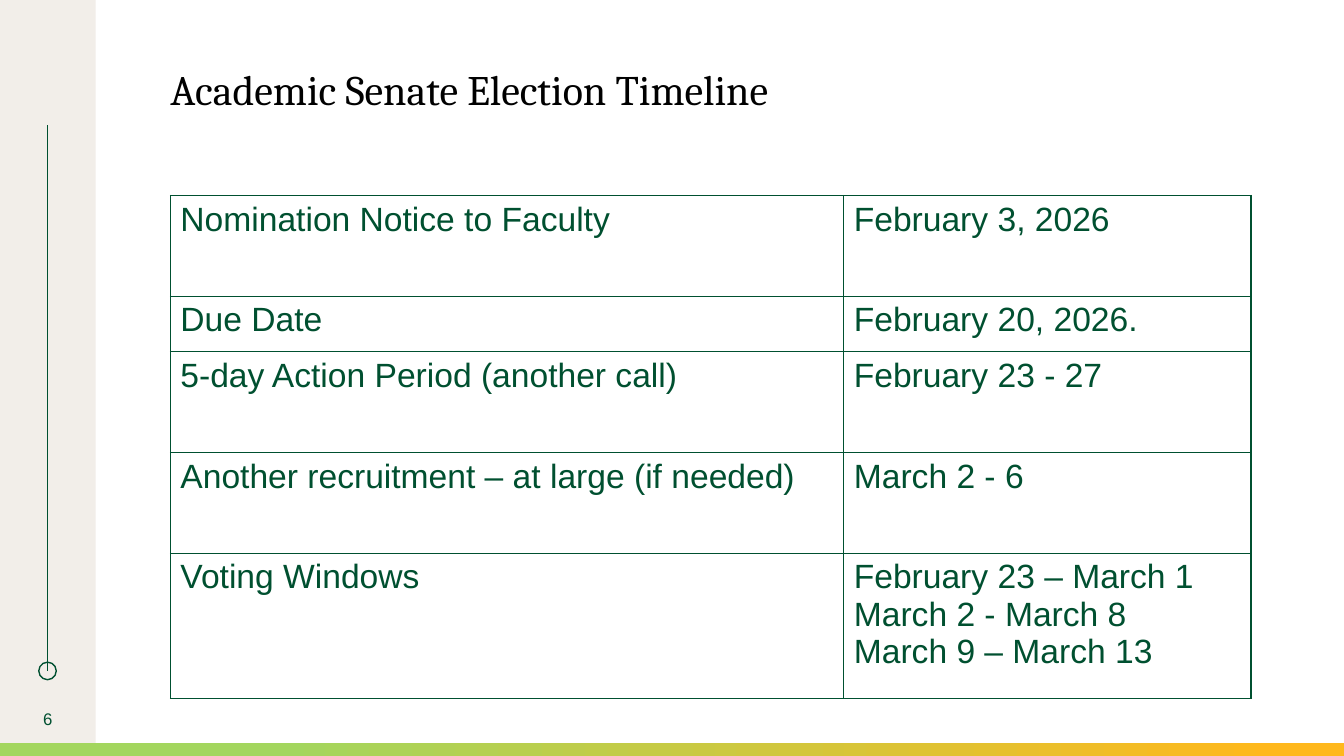
import pptx
import pptx.util
import pptx.dml.color
import pptx.enum.shapes
import pptx.enum.text
import pptx.oxml
import pptx.oxml.ns

Pt = pptx.util.Pt
COLORS = {"green": "005030", "sand": "F2EEE9", "gold": "FFB81C", "lime": "A3D65E", "black": "000000"}


def color(name):
    return pptx.dml.color.RGBColor.from_string(COLORS[name])


def style_font(paragraph, name, size, color_name):
    paragraph.font.name = name
    paragraph.font.size = Pt(size)
    paragraph.font.color.rgb = color(color_name)


presentation = pptx.Presentation()
presentation.slide_width = Pt(960)
presentation.slide_height = Pt(540)
slide = presentation.slides.add_slide(presentation.slide_layouts[5])
shapes = slide.shapes
shape_types = pptx.enum.shapes.MSO_SHAPE

side_band = shapes.add_shape(shape_types.RECTANGLE, 0, 0, Pt(68.4), Pt(540))
side_band.fill.solid()
side_band.fill.fore_color.rgb = color("sand")
side_band.line.fill.background()

side_line = shapes.add_connector(
    pptx.enum.shapes.MSO_CONNECTOR.STRAIGHT, Pt(34), Pt(89.3), Pt(34), Pt(479.5))
side_line.line.color.rgb = color("green")
side_line.line.width = Pt(1)
side_line._element.spPr.append(pptx.oxml.parse_xml(
    f'<a:effectLst {pptx.oxml.ns.nsdecls("a")}/>'))

side_circle = shapes.add_shape(shape_types.OVAL, Pt(27.7), Pt(473), Pt(12.5), Pt(12.5))
side_circle.fill.background()
side_circle.line.color.rgb = color("green")
side_circle.line.width = Pt(1)

bottom_bar = shapes.add_shape(shape_types.RECTANGLE, 0, Pt(530.4), Pt(960), Pt(9.6))
bottom_bar.fill.gradient()
bottom_bar.fill.gradient_angle = 180
for stop, position, name in zip(bottom_bar.fill.gradient_stops, (0.05, 0.79), ("gold", "lime")):
    stop.position = position
    stop.color.rgb = color(name)
bottom_bar.line.fill.background()

for shape in (side_band, side_circle, bottom_bar):
    shape.shadow.inherit = False

title = shapes.title
title.left, title.top, title.width, title.height = Pt(121.7), Pt(49.7), Pt(651.6), Pt(32.4)
title_frame = title.text_frame
title_frame.text = "Academic Senate Election Timeline"
title_frame.margin_left = title_frame.margin_right = 0
title_frame.margin_top = title_frame.margin_bottom = 0
title_frame.vertical_anchor = pptx.enum.text.MSO_ANCHOR.MIDDLE
title_paragraph = title_frame.paragraphs[0]
title_paragraph.alignment = pptx.enum.text.PP_ALIGN.LEFT
title_paragraph.line_spacing = 0.9
style_font(title_paragraph, "Cambria", 30, "black")

page_number = shapes.add_textbox(0, Pt(499), Pt(68.4), Pt(28.8))
page_frame = page_number.text_frame
page_frame.word_wrap = True
page_frame.vertical_anchor = pptx.enum.text.MSO_ANCHOR.MIDDLE
page_frame.text = "6"
page_frame.paragraphs[0].alignment = pptx.enum.text.PP_ALIGN.CENTER
style_font(page_frame.paragraphs[0], "Arial", 12, "green")

timeline = [
    (72, "Nomination Notice to Faculty", "February 3, 2026"),
    (39.6, "Due Date", "February 20, 2026."),
    (72, "5-day Action Period (another call)", "February 23 - 27"),
    (72, "Another recruitment – at large (if needed)", "March 2 - 6"),
    (103.7, "Voting Windows", "February 23 – March 1\nMarch 2 - March 8\nMarch 9 – March 13"),
]
table = shapes.add_table(len(timeline), 2, Pt(121.7), Pt(139.7), Pt(771.9), Pt(359.3)).table
table.first_row = False
table.horz_banding = False
for column, width in zip(table.columns, (481, 290.9)):
    column.width = Pt(width)

for row, (height, *texts) in zip(table.rows, timeline):
    row.height = Pt(height)
    for cell, text in zip(row.cells, texts):
        cell.text = text
        for paragraph in cell.text_frame.paragraphs:
            style_font(paragraph, "Arial", 24, "green")
        cell_properties = cell._tc.get_or_add_tcPr()
        for side in ("lnL", "lnR", "lnT", "lnB"):
            cell_properties.append(pptx.oxml.parse_xml(
                f'<a:{side} {pptx.oxml.ns.nsdecls("a")} w="{Pt(1)}"><a:solidFill>'
                f'<a:srgbClr val="{COLORS["green"]}"/></a:solidFill></a:{side}>'))
        cell.fill.background()

presentation.save("out.pptx")
